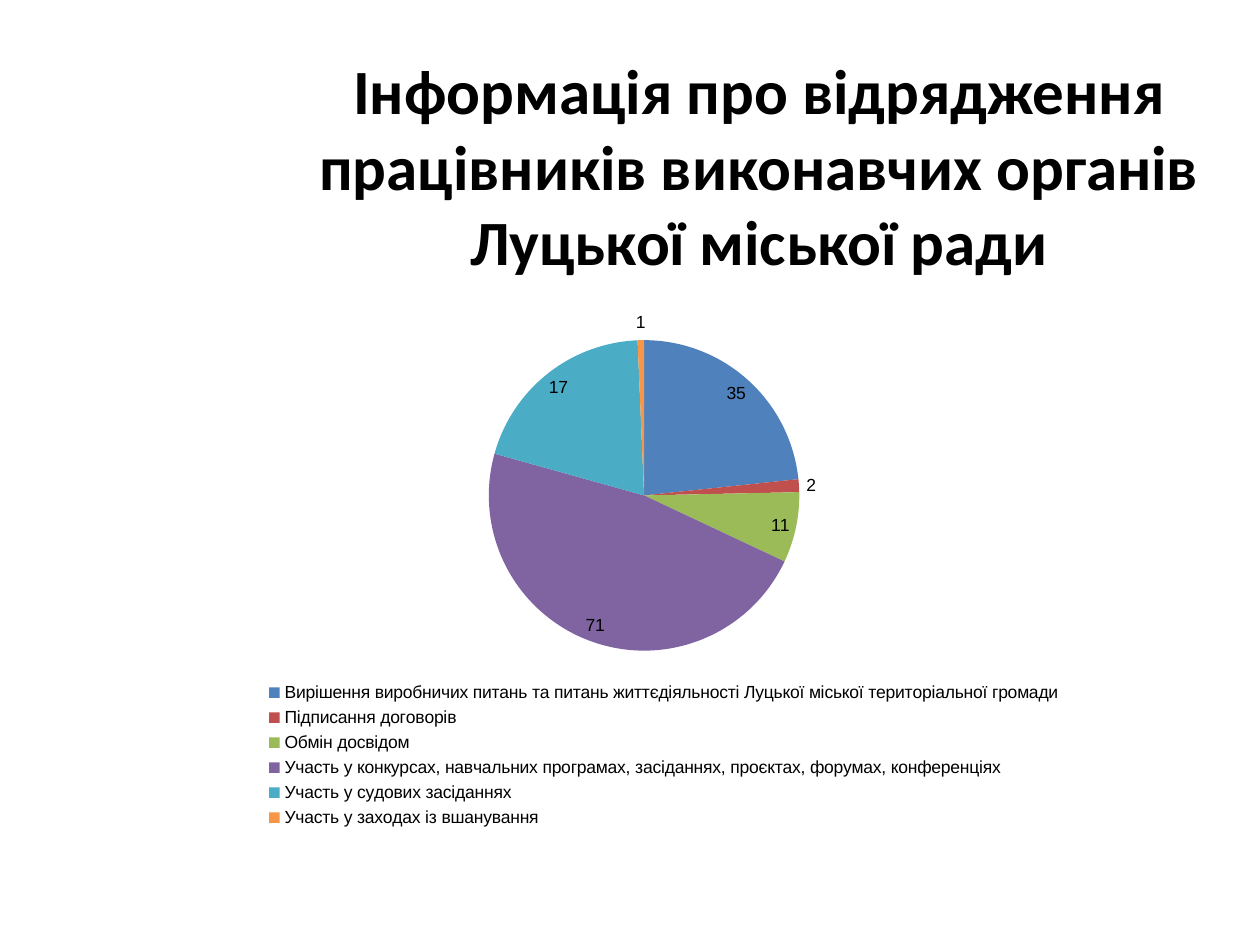
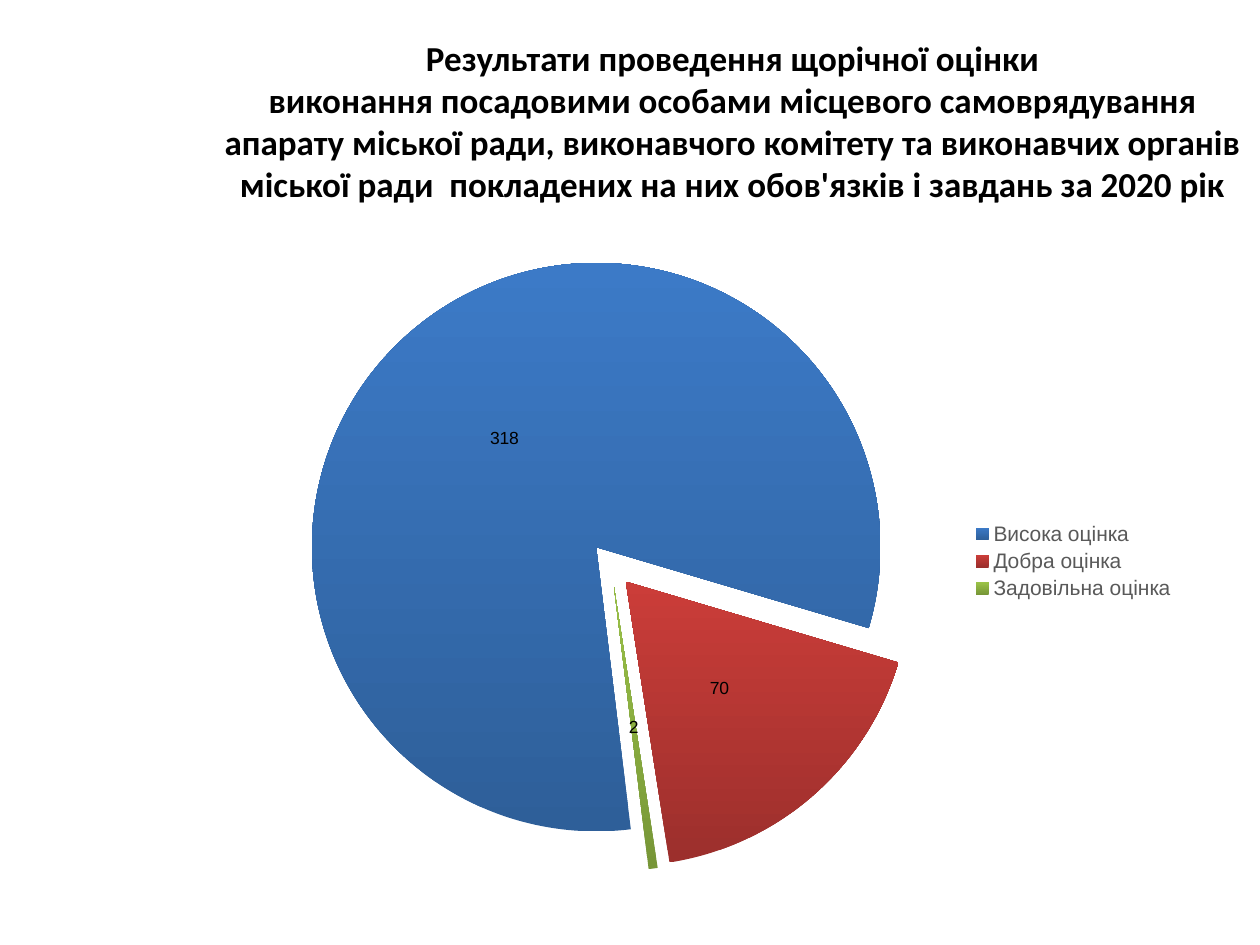
from lxml.etree import SubElement
from pptx import Presentation
from pptx.chart.data import CategoryChartData
from pptx.dml.color import RGBColor
from pptx.enum.chart import XL_CHART_TYPE, XL_LABEL_POSITION, XL_LEGEND_POSITION
from pptx.enum.text import MSO_ANCHOR, MSO_AUTO_SIZE, PP_ALIGN
from pptx.oxml import parse_xml
from pptx.oxml.ns import nsdecls, qn
from pptx.util import Inches, Pt

BLACK, GREY = "000000", "595959"
TITLE_FONT, CHART_FONT = "Calibri", "Arial"

TRIPS = {
    "Вирішення виробничих питань та питань життєдіяльності "
    "Луцької міської територіальної громади": 35,
    "Підписання договорів": 2,
    "Обмін досвідом": 11,
    "Участь у конкурсах, навчальних програмах, засіданнях, "
    "проєктах, форумах, конференціях": 71,
    "Участь у судових засіданнях": 30,
    "Участь у заходах із вшанування": 1,
}
TRIP_COLORS = ["4F81BD", "C0504D", "9BBB59", "8064A2", "4BACC6", "F79646"]
COURT_INDEX, COURT_LABEL = 4, "17"

GRADES = {"Висока оцінка": 318, "Добра оцінка": 70, "Задовільна оцінка": 2}
GRADE_GRADIENTS = [("2E5F99", "3C7AC7"), ("9C2F2C", "CB3D39"), ("779637", "9BC348")]


def color(value):
    """Turn a hex string into a colour."""
    return RGBColor.from_string(value)


def set_font(font, name, size, value, bold=False):
    """Give a font its face, size, colour and weight."""
    font.name, font.size, font.bold = name, Pt(size), bold
    font.color.rgb = color(value)


def add_titled_slide(prs, box, lines, size, anchor, insets=(0, 0)):
    """Add a title-only slide with its title in the given box."""
    s = prs.slides.add_slide(prs.slide_layouts[5])
    title = s.shapes.title
    title.left, title.top, title.width, title.height = map(Inches, box)
    tf = title.text_frame
    tf.text = "\n".join(lines)
    tf.word_wrap, tf.auto_size, tf.vertical_anchor = True, MSO_AUTO_SIZE.NONE, anchor
    tf.margin_left = tf.margin_right = Inches(insets[0])
    tf.margin_top = tf.margin_bottom = Inches(insets[1])
    for p in tf.paragraphs:
        p.alignment = PP_ALIGN.CENTER
        set_font(p.font, TITLE_FONT, size, BLACK, bold=True)
    return s


def manual_layout(box, inner=False):
    """Build a chart layout from fractions of the chart's area."""
    layout = parse_xml(f"<c:layout {nsdecls('c')}><c:manualLayout/></c:layout>")
    fields = [("layoutTarget", "inner")] if inner else []
    fields += [("xMode", "edge"), ("yMode", "edge"), *zip("xywh", box)]
    for tag, value in fields:
        SubElement(layout[0], qn(f"c:{tag}")).set("val", str(value))
    return layout


def add_pie(s, box, values, plot_box, legend_position, legend_font, label_position):
    """Add a pie with value labels and a legend in the given box."""
    data = CategoryChartData()
    data.categories = list(values)
    data.add_series("Series 1", list(values.values()))
    chart = s.shapes.add_chart(XL_CHART_TYPE.PIE, *map(Inches, box), data).chart
    set_font(chart.font, CHART_FONT, 10, BLACK)
    chart.has_title = False
    chart.has_legend = True
    chart.legend.position = legend_position
    chart.legend.include_in_layout = False
    set_font(chart.legend.font, CHART_FONT, *legend_font)
    plot = chart.plots[0]
    plot.vary_by_categories = True
    labels = plot.series[0].data_labels
    labels.show_value, labels.position = True, label_position
    set_font(labels.font, CHART_FONT, 10, BLACK)
    area = chart._chartSpace.chart.plotArea
    for old in area.findall(qn("c:layout")):
        area.remove(old)
    area.insert(0, manual_layout(plot_box, inner=True))
    return chart


def add_trips_slide(prs):
    """Show business trips by purpose, with the legend below the pie."""
    s = add_titled_slide(
        prs, (2.05, 0.41, 7.95, 1.8),
        ["Інформація про відрядження працівників виконавчих органів Луцької міської ради"],
        36, MSO_ANCHOR.MIDDLE)
    chart = add_pie(s, (0.08, 2.36, 10.27, 4.25), TRIPS, (0.37, 0.08, 0.24, 0.58),
                    XL_LEGEND_POSITION.BOTTOM, (10, BLACK), XL_LABEL_POSITION.BEST_FIT)
    legend = chart.legend._element
    for old in legend.findall(qn("c:layout")):
        legend.remove(old)
    legend.find(qn("c:legendPos")).addnext(manual_layout((0.19, 0.71, 0.63, 0.29)))
    points = chart.plots[0].series[0].points
    for i, value in enumerate(TRIP_COLORS):
        fill = points[i].format.fill
        fill.solid()
        fill.fore_color.rgb = color(value)
    label = points[COURT_INDEX].data_label
    label.text_frame.text = COURT_LABEL
    set_font(label.text_frame.paragraphs[0].runs[0].font, CHART_FONT, 10, BLACK)
    label.position = XL_LABEL_POSITION.BEST_FIT


def add_grades_slide(prs):
    """Show yearly appraisal grades as an exploded pie."""
    s = add_titled_slide(
        prs, (1.63, 0.24, 8.37, 1.47),
        ["Результати проведення щорічної оцінки",
         "виконання посадовими особами місцевого самоврядування апарату міської ради, "
         "виконавчого комітету та виконавчих органів міської ради  покладених на них "
         "обов'язків і завдань за 2020 рік"],
        20, MSO_ANCHOR.TOP, insets=(0.1, 0.05))
    chart = add_pie(s, (2.04, 1.89, 7.39, 5.13), GRADES, (0.05, 0.03, 0.66, 0.95),
                    XL_LEGEND_POSITION.RIGHT, (12, GREY), XL_LABEL_POSITION.CENTER)
    plot = chart.plots[0]
    series = plot.series[0]
    explosion = parse_xml(f'<c:explosion {nsdecls("c")} val="8"/>')
    series._element.find(qn("c:tx")).addnext(explosion)
    for old in plot._element.findall(qn("c:firstSliceAng")):
        plot._element.remove(old)
    SubElement(plot._element, qn("c:firstSliceAng")).set("val", "173")
    for i, shades in enumerate(GRADE_GRADIENTS):
        fill = series.points[i].format.fill
        fill.gradient()
        fill.gradient_angle = 90
        for stop, shade, position in zip(fill.gradient_stops, shades, (0, 1)):
            stop.color.rgb, stop.position = color(shade), position


def main():
    """Build both slides and save the presentation."""
    prs = Presentation()
    prs.slide_width, prs.slide_height = Inches(10), Inches(7.5)
    add_trips_slide(prs)
    add_grades_slide(prs)
    prs.save("out.pptx")


if __name__ == "__main__":
    main()
